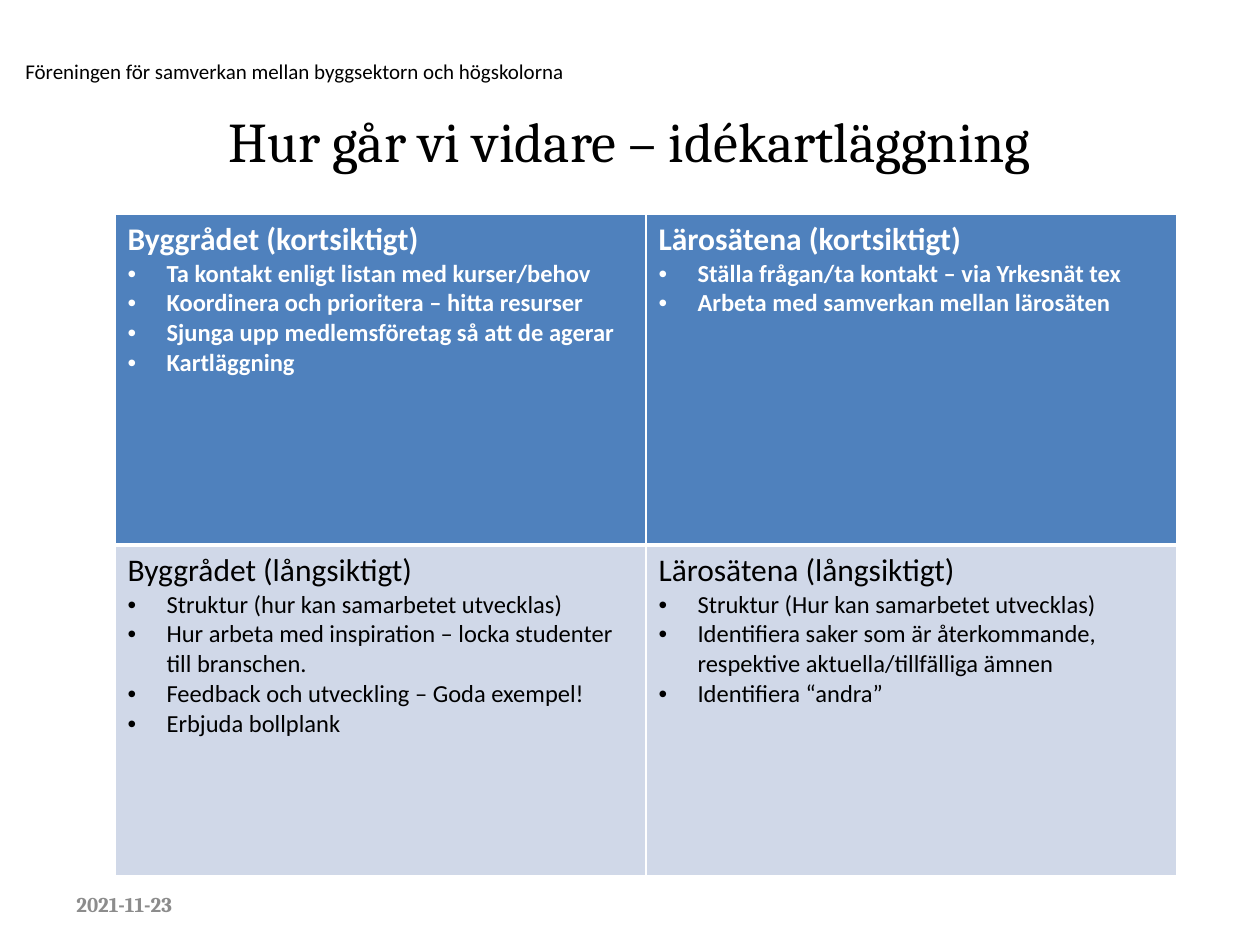
from dataclasses import dataclass

from lxml.etree import SubElement
from pptx import Presentation
from pptx.dml.color import RGBColor
from pptx.enum.text import MSO_ANCHOR, PP_ALIGN
from pptx.oxml.ns import qn
from pptx.util import Emu, Pt


@dataclass(frozen=True)
class Theme:
    """Colours, fonts and type sizes of the slide."""

    black: str = "000000"
    white: str = "FFFFFF"
    grey: str = "8C8C8C"
    blue: str = "4F81BD"
    pale_blue: str = "D0D8E8"
    heading_font: str = "Cambria"
    body_font: str = "Calibri"
    title_size: int = 32
    cell_title_size: int = 18
    list_size: int = 14
    small_size: int = 12
    thin_line: int = 1
    thick_line: int = 3


def px(length):
    """Turn pixels into EMU."""
    return Emu(round(length * 914400 / 126))


def apply_format(target, values):
    """Set every attribute named in a dict of format values."""
    for name, value in values.items():
        setattr(target, name, value)


class SlideBuilder:
    """Holds the theme and the current slide, and adds elements to it."""

    def __init__(self, slide, theme):
        """Keep the slide and its theme."""
        self.slide = slide
        self.theme = theme

    def add_text(self, paragraph, text, size, name, color, bold=False):
        """Put formatted text into a paragraph."""
        run = paragraph.add_run()
        run.text = text
        apply_format(run.font, {"size": Pt(size), "name": name, "bold": bold})
        run.font.color.rgb = RGBColor.from_string(color)

    def place(self, shape, left, top, width, height):
        """Position a shape by pixel lengths."""
        apply_format(shape, {
            "left": px(left), "top": px(top),
            "width": px(width), "height": px(height),
        })

    def title(self, text, box):
        """Fill and place the title placeholder."""
        shape = self.slide.shapes.title
        self.place(shape, *box)
        shape.text_frame.vertical_anchor = MSO_ANCHOR.MIDDLE
        paragraph = shape.text_frame.paragraphs[0]
        paragraph.alignment = PP_ALIGN.CENTER
        self.add_text(paragraph, text, self.theme.title_size,
                      self.theme.heading_font, self.theme.black)

    def label(self, text, box, name, color, bold=False,
              anchor=MSO_ANCHOR.TOP, line_spacing=None):
        """Add a small line of text."""
        shape = self.slide.shapes.add_textbox(*map(px, box))
        apply_format(shape.text_frame, {"word_wrap": True, "vertical_anchor": anchor})
        paragraph = shape.text_frame.paragraphs[0]
        paragraph.line_spacing = line_spacing
        self.add_text(paragraph, text, self.theme.small_size, name, color, bold)

    def bullet(self, paragraph, indent):
        """Give a paragraph a hanging bullet."""
        properties = paragraph._p.get_or_add_pPr()
        properties.set("marL", str(indent))
        properties.set("indent", str(-indent))
        SubElement(properties, qn("a:buFont"), typeface="Arial")
        SubElement(properties, qn("a:buChar"), char="•")

    def borders(self, cell, widths):
        """Draw white cell borders of the given widths in points."""
        properties = cell._tc.get_or_add_tcPr()
        for side, width in widths.items():
            line = SubElement(properties, qn(f"a:ln{side}"), w=str(Pt(width)))
            fill = SubElement(line, qn("a:solidFill"))
            SubElement(fill, qn("a:srgbClr"), val=self.theme.white)

    def cell(self, cell, heading, items, is_header):
        """Fill one cell with a heading and a bulleted list."""
        theme = self.theme
        thin, thick = theme.thin_line, theme.thick_line
        self.borders(cell, {
            "L": thin, "R": thin,
            "T": thin if is_header else thick,
            "B": thick if is_header else thin,
        })
        cell.fill.solid()
        cell.fill.fore_color.rgb = RGBColor.from_string(
            theme.blue if is_header else theme.pale_blue)
        color = theme.white if is_header else theme.black
        frame = cell.text_frame
        self.add_text(frame.paragraphs[0], heading, theme.cell_title_size,
                      theme.body_font, color, is_header)
        for item in items:
            paragraph = frame.add_paragraph()
            self.bullet(paragraph, px(39))
            self.add_text(paragraph, item, theme.list_size,
                          theme.body_font, color, is_header)

    def table(self, rows, box):
        """Add a table of equal cells whose first row is the header."""
        left, top, width, height = box
        columns = len(rows[0])
        table = self.slide.shapes.add_table(
            len(rows), columns, px(left), px(top), px(width), px(height)).table
        table.horz_banding = False
        for column in table.columns:
            column.width = px(width / columns)
        for row_index, row in enumerate(rows):
            table.rows[row_index].height = px(height / len(rows))
            for column_index, (heading, items) in enumerate(row):
                self.cell(table.cell(row_index, column_index),
                          heading, items, row_index == 0)


IDEAS = [
    [
        ("Byggrådet (kortsiktigt)", [
            "Ta kontakt enligt listan med kurser/behov",
            "Koordinera och prioritera – hitta resurser",
            "Sjunga upp medlemsföretag så att de agerar",
            "Kartläggning",
        ]),
        ("Lärosätena (kortsiktigt)", [
            "Ställa frågan/ta kontakt – via Yrkesnät tex",
            "Arbeta med samverkan mellan lärosäten",
        ]),
    ],
    [
        ("Byggrådet (långsiktigt)", [
            "Struktur (hur kan samarbetet utvecklas)",
            "Hur arbeta med inspiration – locka studenter till branschen.",
            "Feedback och utveckling – Goda exempel!",
            "Erbjuda bollplank",
        ]),
        ("Lärosätena (långsiktigt)", [
            "Struktur (Hur kan samarbetet utvecklas)",
            "Identifiera saker som är återkommande, respektive aktuella/tillfälliga ämnen",
            "Identifiera “andra”",
        ]),
    ],
]


def main():
    """Build the slide and save it."""
    presentation = Presentation()
    apply_format(presentation, {"slide_width": px(1260), "slide_height": px(945)})
    theme = Theme()
    slide = presentation.slides.add_slide(presentation.slide_layouts[5])
    builder = SlideBuilder(slide, theme)
    builder.label("Föreningen för samverkan mellan byggsektorn och högskolorna",
                  (13, 57, 809, 35), theme.body_font, theme.black,
                  line_spacing=Pt(12))
    builder.title("Hur går vi vidare – idékartläggning", (63, 66, 1134, 149))
    builder.label("2021-11-23", (64, 879, 294, 50), theme.heading_font, theme.grey,
                  bold=True, anchor=MSO_ANCHOR.MIDDLE)
    builder.table(IDEAS, (115, 214, 1062, 662))
    presentation.save("out.pptx")


if __name__ == "__main__":
    main()
